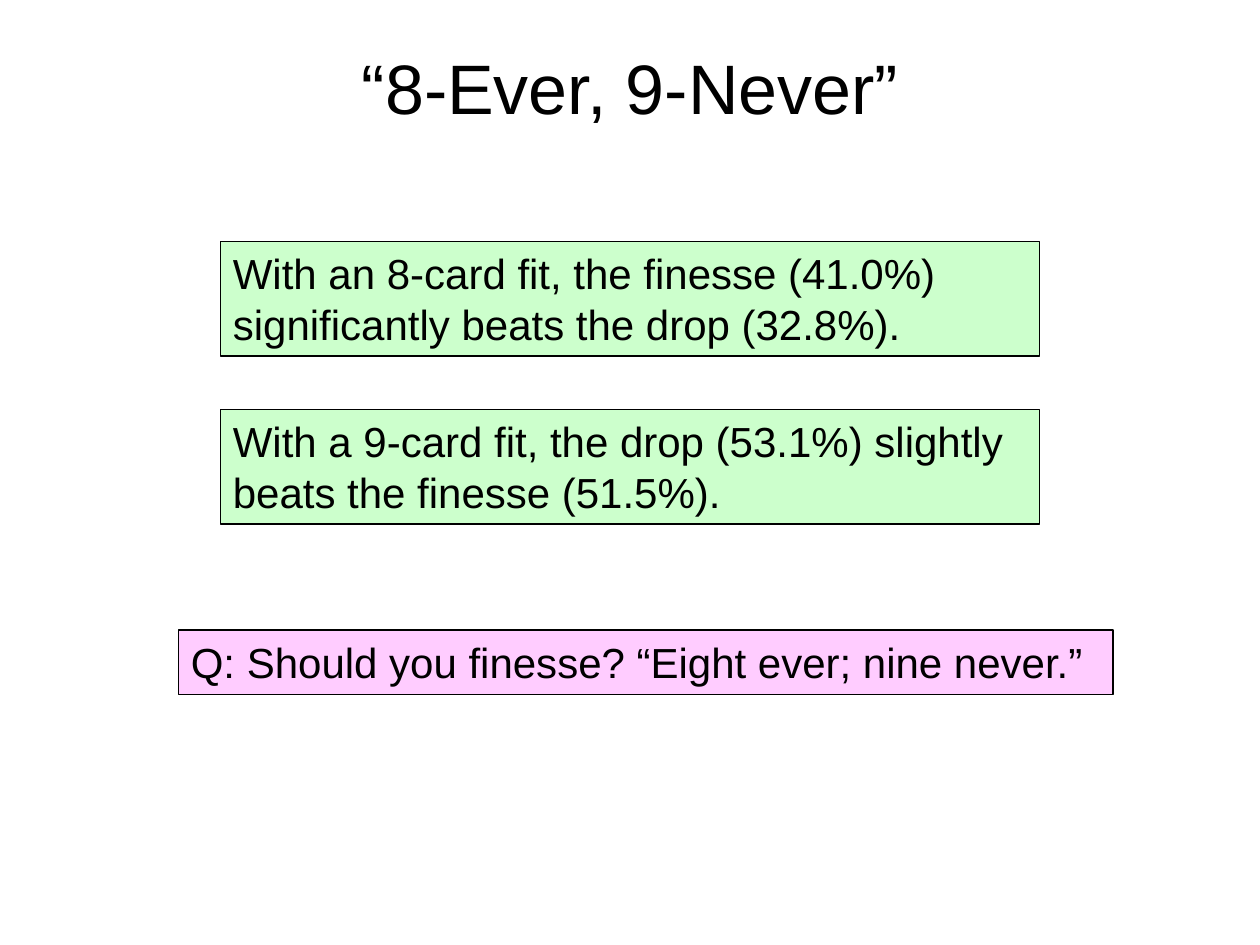
from pptx import Presentation
from pptx.dml.color import RGBColor
from pptx.enum.text import MSO_ANCHOR, MSO_AUTO_SIZE, PP_ALIGN
from pptx.util import Pt

CENTER = PP_ALIGN.CENTER
MIDDLE = MSO_ANCHOR.MIDDLE
GROW = MSO_AUTO_SIZE.SHAPE_TO_FIT_TEXT
NO_FIT = MSO_AUTO_SIZE.NONE

FONT = "Arial"
COLORS = {"ink": "000000", "fact": "CCFFCC", "question": "FFCCFF"}
FACTS = [
    "With an 8-card fit, the finesse (41.0%) significantly beats the drop (32.8%).",
    "With a 9-card fit, the drop (53.1%) slightly beats the finesse (51.5%).",
]
QUESTION = "Q: Should you finesse? “Eight ever; nine never.”"


def color(name):
    return RGBColor.from_string(COLORS[name])


def place(sp, left, top, width, height):
    sp.left, sp.top = Pt(left), Pt(top)
    sp.width, sp.height = Pt(width), Pt(height)


def style(p, size):
    p.font.name = FONT
    p.font.size = Pt(size)
    p.font.color.rgb = color("ink")


def add_title(s, text, box):
    sp = s.shapes.title
    place(sp, *box)
    tf = sp.text_frame
    tf.text = text
    tf.auto_size = NO_FIT
    tf.vertical_anchor = MIDDLE
    p = tf.paragraphs[0]
    p.alignment = CENTER
    style(p, 40)


def add_note(s, text, fill, box):
    sp = s.shapes.add_textbox(*(Pt(v) for v in box))
    sp.fill.solid()
    sp.fill.fore_color.rgb = color(fill)
    sp.line.color.rgb = color("ink")
    sp.line.width = Pt(0.75)
    tf = sp.text_frame
    tf.word_wrap = True
    tf.auto_size = GROW
    tf.text = text
    style(tf.paragraphs[0], 24)


def add_facts(s, texts, box, pitch):
    left, top, width, height = box
    for i, text in enumerate(texts):
        add_note(s, text, "fact", (left, top + i * pitch, width, height))


def main():
    prs = Presentation()
    prs.slide_width, prs.slide_height = Pt(720), Pt(540)
    s = prs.slides.add_slide(prs.slide_layouts[5])
    add_title(s, "“8-Ever, 9-Never”", (36, 21.6, 648, 56.2))
    add_facts(s, FACTS, (126, 138, 468, 65.5), 96)
    add_note(s, QUESTION, "question", (102, 360, 534, 36.7))
    prs.save("out.pptx")


if __name__ == "__main__":
    main()
